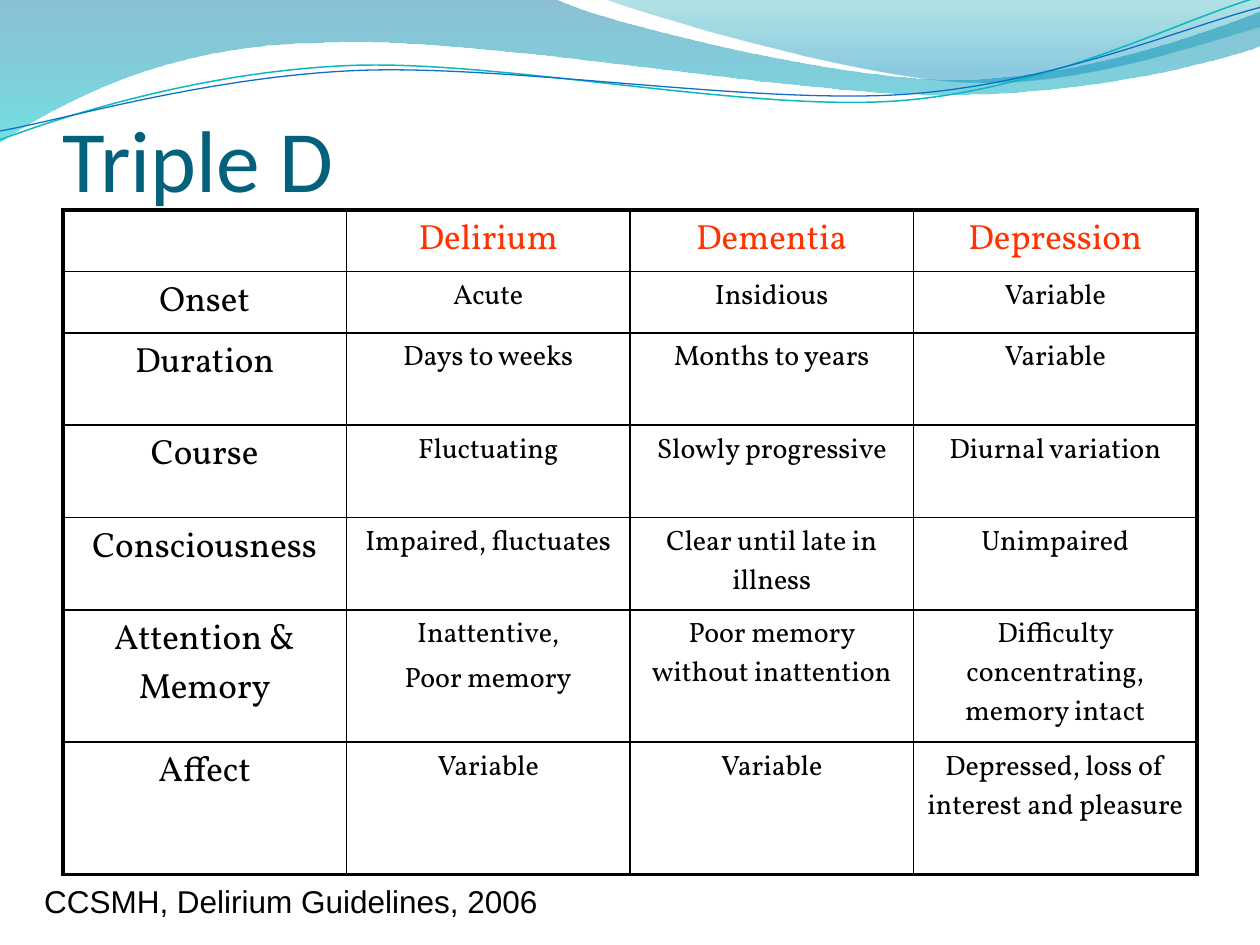
from math import cos, radians, sin

from lxml import etree
from pptx import Presentation
from pptx.dml.color import RGBColor
from pptx.enum.text import MSO_ANCHOR, MSO_AUTO_SIZE, PP_ALIGN
from pptx.oxml.ns import qn
from pptx.util import Cm, Pt

CENTER = PP_ALIGN.CENTER
LEFT = PP_ALIGN.LEFT
BOTTOM = MSO_ANCHOR.BOTTOM
TOP = MSO_ANCHOR.TOP
GROW = MSO_AUTO_SIZE.SHAPE_TO_FIT_TEXT
FIXED = MSO_AUTO_SIZE.NONE

BLACK = RGBColor(0x00, 0x00, 0x00)
WHITE = RGBColor(0xFF, 0xFF, 0xFF)
RED = RGBColor(0xFF, 0x33, 0x00)
TEAL = RGBColor(0x04, 0x61, 0x7B)
OCEAN = RGBColor(0x00, 0x74, 0xA1)
AQUA = RGBColor(0x00, 0xC6, 0xCF)
GREEN = RGBColor(0x00, 0xA1, 0xA9)
SKY = RGBColor(0x00, 0x8B, 0xBF)
CYAN = RGBColor(0x0A, 0xB8, 0xBF)
BLUE = RGBColor(0x0F, 0x6F, 0xC6)

INCH = 2.54
TILT = -2.7

BANDS = [
    ([(0, -0.01), (4.4, -0.01), (4.76, 0.17, 6.64, 0.63, 7.58, 0.63),
      (8.53, 0.63, 9.58, 0.26, 10, 0.09), (10.01, 0.36),
      (9.83, 0.44, 8.7, 0.76, 7.46, 0.75),
      (6.22, 0.75, 3.82, 0.28, 2.57, 0.34),
      (1.29, 0.35, 0.46, 0.83, -0.01, 1.13), (0, -0.01)],
     [(0, OCEAN, 45), (1, AQUA, 55)]),
    ([(4.79, -0.01), (5.09, 0.11, 6.82, 0.62, 7.69, 0.65),
      (8.56, 0.69, 9.61, 0.32, 10, 0.21), (10, 0), (4.79, -0.01)],
     [(0, GREEN, 30), (0.8, SKY, 45)]),
]
WAVES = [
    ([(0, 1.11), (0.48, 0.93, 1.58, 0.57, 2.77, 0.52),
      (3.95, 0.47, 5.93, 0.89, 7.13, 0.8),
      (8.33, 0.71, 9.38, 0.15, 9.98, -0.02)], (4.99, 0.57), CYAN, 0.85),
    ([(0, 1.04), (0.47, 0.96, 1.64, 0.61, 2.83, 0.56),
      (4.03, 0.51, 5.97, 0.83, 7.17, 0.75),
      (8.36, 0.67, 9.41, 0.21, 10, 0.06)], (5, 0.59), BLUE, 0.75),
]
ROWS = [
    ["", "Delirium", "Dementia", "Depression"],
    ["Onset", "Acute", "Insidious", "Variable"],
    ["Duration", "Days to weeks", "Months to years", "Variable"],
    ["Course", "Fluctuating", "Slowly progressive", "Diurnal variation"],
    ["Consciousness", "Impaired, fluctuates", "Clear until late in illness",
     "Unimpaired"],
    ["Attention & Memory", "Inattentive,\nPoor memory",
     "Poor memory without inattention",
     "Difficulty concentrating, memory intact"],
    ["Affect", "Variable", "Variable",
     "Depressed, loss of interest and pleasure"],
]
TALL = [1.09, 1.09, 1.86, 1.86, 1.86, 2.67, 2.67]


def put(item, vals):
    """Set each named value on the item."""
    for name, val in vals.items():
        setattr(item, name, val)


def turn(path, mid, deg):
    """Rotate every point of a path clockwise about a middle point."""
    c, s = cos(radians(deg)), sin(radians(deg))
    mx, my = mid
    return [tuple(v for x, y in zip(seg[::2], seg[1::2])
                  for v in (mx + (x - mx) * c - (y - my) * s,
                            my + (x - mx) * s + (y - my) * c))
            for seg in path]


def draw(slide, path, close):
    """Build a freeform of lines and cubic curves given in inches."""
    spots = [(Cm(x * INCH), Cm(y * INCH)) for seg in path
             for x, y in zip(seg[::2], seg[1::2])]
    form = slide.shapes.build_freeform(*spots[0])
    form.add_line_segments(spots[1:], close=close)
    shape = form.convert_to_shape()
    shape.shadow.inherit = False
    lines = iter(list(shape._element.iter(qn("a:lnTo"))))
    for seg in path[1:]:
        first = next(lines)
        if len(seg) == 6:
            first.tag = qn("a:cubicBezTo")
            for extra in (next(lines), next(lines)):
                first.append(extra[0])
                extra.getparent().remove(extra)
    return shape


def add_band(slide, path, stops):
    """Add a closed band with a see-through vertical gradient."""
    shape = draw(slide, path, True)
    shape.line.fill.background()
    shape.fill.gradient()
    shape.fill.gradient_angle = 270
    for stop, (pos, color, alpha) in zip(shape.fill.gradient_stops, stops):
        stop.position = pos
        stop.color.rgb = color
    marks = shape._element.spPr.iter(qn("a:srgbClr"))
    for mark, (pos, color, alpha) in zip(marks, stops):
        etree.SubElement(mark, qn("a:alpha"), val=str(alpha * 1000))


def add_wave(slide, path, mid, color, width):
    """Add a thin tilted wave line."""
    shape = draw(slide, turn(path, mid, -TILT), False)
    shape.rotation = TILT
    shape.fill.background()
    shape.line.color.rgb = color
    shape.line.width = Pt(width)


def write(frame, text, font, size, color, align=LEFT, gap=0):
    """Fill a text frame, one paragraph for each line."""
    frame.text = text
    for para in frame.paragraphs:
        put(para, {"alignment": align, "space_before": Pt(size * gap)})
        for run in para.runs:
            put(run.font, {"name": font, "size": Pt(size)})
            run.font.color.rgb = color


def add_text(slide, box, text, look, form):
    """Add a text box with the given frame format."""
    frame = slide.shapes.add_textbox(*map(Cm, box)).text_frame
    write(frame, text, *look)
    put(frame, form)


def edge(cell, side, width):
    """Draw one black border of a cell."""
    line = etree.SubElement(cell._tc.get_or_add_tcPr(), qn("a:ln" + side),
                            w=str(Pt(width)))
    fill = etree.SubElement(line, qn("a:solidFill"))
    etree.SubElement(fill, qn("a:srgbClr"), val=str(BLACK))


def add_grid(slide):
    """Add the comparison table."""
    high, wide = len(ROWS), len(ROWS[0])
    area = map(Cm, (1.27, 4.23, 22.86, sum(TALL)))
    grid = slide.shapes.add_table(high, wide, *area).table
    put(grid, {"first_row": False, "horz_banding": False})
    for r, row in enumerate(ROWS):
        grid.rows[r].height = Cm(TALL[r])
        for c, text in enumerate(row):
            cell = grid.cell(r, c)
            size = 16 if r and c else 20
            write(cell.text_frame, text, "Vollkorn", size,
                  BLACK if r else RED, CENTER, 0.2)
            outer = {"L": c == 0, "R": c == wide - 1,
                     "T": r == 0, "B": r == high - 1}
            for side, rim in outer.items():
                edge(cell, side, 2.25 if rim else 1)
            cell.fill.solid()
            cell.fill.fore_color.rgb = WHITE


def main():
    """Build the slide and save it."""
    deck = Presentation()
    put(deck, {"slide_width": Cm(25.4), "slide_height": Cm(19.05)})
    slide = deck.slides.add_slide(deck.slide_layouts[6])
    for band in BANDS:
        add_band(slide, *band)
    for wave in WAVES:
        add_wave(slide, *wave)
    add_text(slide, (1.27, 1.06, 22.86, 3.17), "Triple D",
             ("Calibri", 50, TEAL),
             {"margin_left": 0, "margin_right": 0, "margin_bottom": 0,
              "word_wrap": True, "auto_size": FIXED,
              "vertical_anchor": BOTTOM})
    add_grid(slide)
    add_text(slide, (0.64, 17.65, 10.57, 1.02),
             "CCSMH, Delirium Guidelines, 2006", ("Arial", 18, BLACK),
             {"word_wrap": False, "auto_size": GROW, "vertical_anchor": TOP})
    deck.save("out.pptx")


if __name__ == "__main__":
    main()
